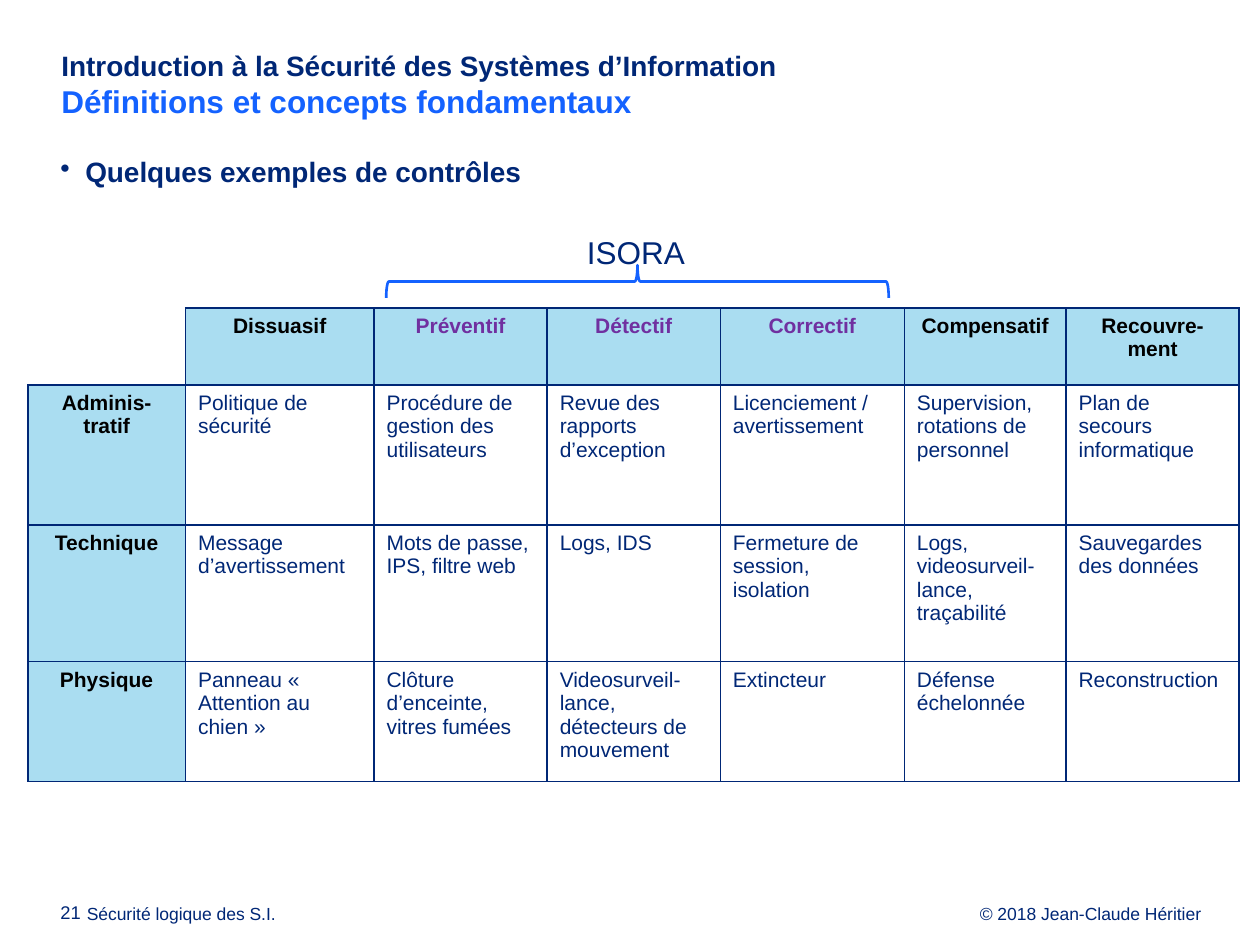
from dataclasses import dataclass

import pptx
import pptx.dml.color
import pptx.enum.shapes
import pptx.enum.text
import pptx.oxml
import pptx.oxml.ns
import pptx.util
from pptx.util import Cm, Pt

NAVY, BLUE, PURPLE, BLACK, PALE = "002776", "1462FF", "7030A0", "000000", "AADDF1"
ALIGN = pptx.enum.text.PP_ALIGN


@dataclass
class Label:
    text: str
    left: float
    top: float
    width: float
    height: float
    size: float
    align: ALIGN = ALIGN.LEFT
    bold: bool = False
    margin: float = 0
    wrap: bool = True


def rgb(color: str) -> pptx.dml.color.RGBColor:
    return pptx.dml.color.RGBColor.from_string(color)


def style(r, size: float, color: str, bold: bool = False) -> None:
    r.font.name = "Arial"
    r.font.size = Pt(size)
    r.font.bold = bold
    r.font.color.rgb = rgb(color)


def add_label(s, label: Label):
    sp = s.shapes.add_textbox(Cm(label.left), Cm(label.top), Cm(label.width), Cm(label.height))
    tf = sp.text_frame
    tf.word_wrap = label.wrap
    tf.margin_left = Cm(label.margin)
    tf.margin_right = tf.margin_top = tf.margin_bottom = 0
    p = tf.paragraphs[0]
    p.text = label.text
    p.alignment = label.align
    for r in p.runs:
        style(r, label.size, NAVY, label.bold)
    return p


def add_bullet(p, indent: float) -> None:
    pPr = p._p.get_or_add_pPr()
    pPr.set("marL", str(Cm(indent)))
    pPr.set("indent", str(-Cm(indent)))
    bullet = pptx.oxml.ns.qn("a:buChar")
    pPr.append(pPr.makeelement(bullet, {"char": "•"}))


def set_borders(cell, hidden: str = "") -> None:
    """Draw the four cell borders; sides named in hidden get no line."""
    ns = pptx.oxml.ns.nsdecls("a")
    tcPr = cell._tc.get_or_add_tcPr()
    for i, side in enumerate("LRTB"):
        fill = "<a:noFill/>" if side in hidden else (
            f'<a:solidFill><a:srgbClr val="{NAVY}"/></a:solidFill>')
        ln = pptx.oxml.parse_xml(f'<a:ln{side} {ns} w="{Pt(1)}">{fill}</a:ln{side}>')
        tcPr.insert(i, ln)


def fill_cell(cell, text: str, color: str, header: bool) -> None:
    p = cell.text_frame.paragraphs[0]
    p.text = text
    p.alignment = ALIGN.CENTER if header else ALIGN.LEFT
    for r in p.runs:
        style(r, 12, color, header)
    if header and text:
        cell.fill.solid()
        cell.fill.fore_color.rgb = rgb(PALE)
    else:
        cell.fill.background()
    set_borders(cell, "" if text else "LT")


def add_controls_table(s, left: float, top: float, widths: list[float],
                       heights: list[float], rows: list[list[str]]) -> None:
    table = s.shapes.add_table(len(rows), len(widths), Cm(left), Cm(top),
                               Cm(sum(widths)), Cm(sum(heights))).table
    table.horz_banding = False
    for col, width in zip(table.columns, widths):
        col.width = Cm(width)
    for row, height in zip(table.rows, heights):
        row.height = Cm(height)
    for i, texts in enumerate(rows):
        for j, text in enumerate(texts):
            header = i == 0 or j == 0
            color = BLACK if header else NAVY
            if i == 0 and 2 <= j <= 4:
                color = PURPLE
            fill_cell(table.cell(i, j), text, color, header)


WIDTHS = [3.18, 3.8, 3.49, 3.49, 3.71, 3.26, 3.49]
HEIGHTS = [1.55, 2.82, 2.76, 2.41]
CONTROLS = [
    ["", "Dissuasif", "Préventif", "Détectif", "Correctif", "Compensatif", "Recouvre-ment"],
    ["Adminis-tratif", "Politique de sécurité", "Procédure de gestion des utilisateurs",
     "Revue des rapports d’exception", "Licenciement / avertissement",
     "Supervision, rotations de personnel", "Plan de secours informatique"],
    ["Technique", "Message d’avertissement", "Mots de passe, IPS, filtre web",
     "Logs, IDS", "Fermeture de session, isolation",
     "Logs, videosurveil-lance, traçabilité", "Sauvegardes des données"],
    ["Physique", "Panneau « Attention au chien »", "Clôture d’enceinte, vitres fumées",
     "Videosurveil-lance, détecteurs de mouvement", "Extincteur",
     "Défense échelonnée", "Reconstruction"],
]
FOOTERS = [
    Label("© 2018 Jean-Claude Héritier", 17.78, 18.24, 6.43, 0.41, 10, ALIGN.RIGHT),
    Label("Sécurité logique des S.I.", 1.75, 18.24, 6.43, 0.41, 10),
    Label("21", 1.22, 18.24, 0.66, 0.41, 10.5),
]


def main() -> None:
    prs = pptx.Presentation()
    prs.slide_width, prs.slide_height = Cm(25.4), Cm(19.05)
    s = prs.slides.add_slide(prs.slide_layouts[6])

    # Footer
    for footer in FOOTERS:
        add_label(s, footer).line_spacing = Pt(10.8)

    # Title and subtitle
    title = add_label(s, Label(
        "Introduction à la Sécurité des Systèmes d’Information\v"
        "Définitions et concepts fondamentaux",
        1.14, 0.97, 23.39, 1.75, 16, bold=True, margin=0.1))
    style(title.runs[1], 18, BLUE, True)

    # Bullet heading
    heading = add_label(s, Label("Quelques exemples de contrôles", 1.12, 3.12, 23.39, 0.8,
                                 16, bold=True, margin=0.1))
    add_bullet(heading, 0.5)

    # Table of controls
    add_controls_table(s, 0.56, 6.21, WIDTHS, HEIGHTS, CONTROLS)

    # Brace over the three middle categories
    sp = s.shapes.add_shape(pptx.enum.shapes.MSO_SHAPE.LEFT_BRACE,
                            Cm(12.52), Cm(0.61), Cm(0.66), Cm(10.13))
    sp.rotation = 90
    sp.adjustments[0] = 0.083
    sp.shadow.inherit = False
    sp.fill.background()
    sp.line.color.rgb = rgb(BLUE)
    sp.line.width = Pt(1.5)
    add_label(s, Label("ISORA", 11.6, 4.69, 2.44, 0.8, 18, ALIGN.CENTER, wrap=False))

    prs.save("out.pptx")


if __name__ == "__main__":
    main()
